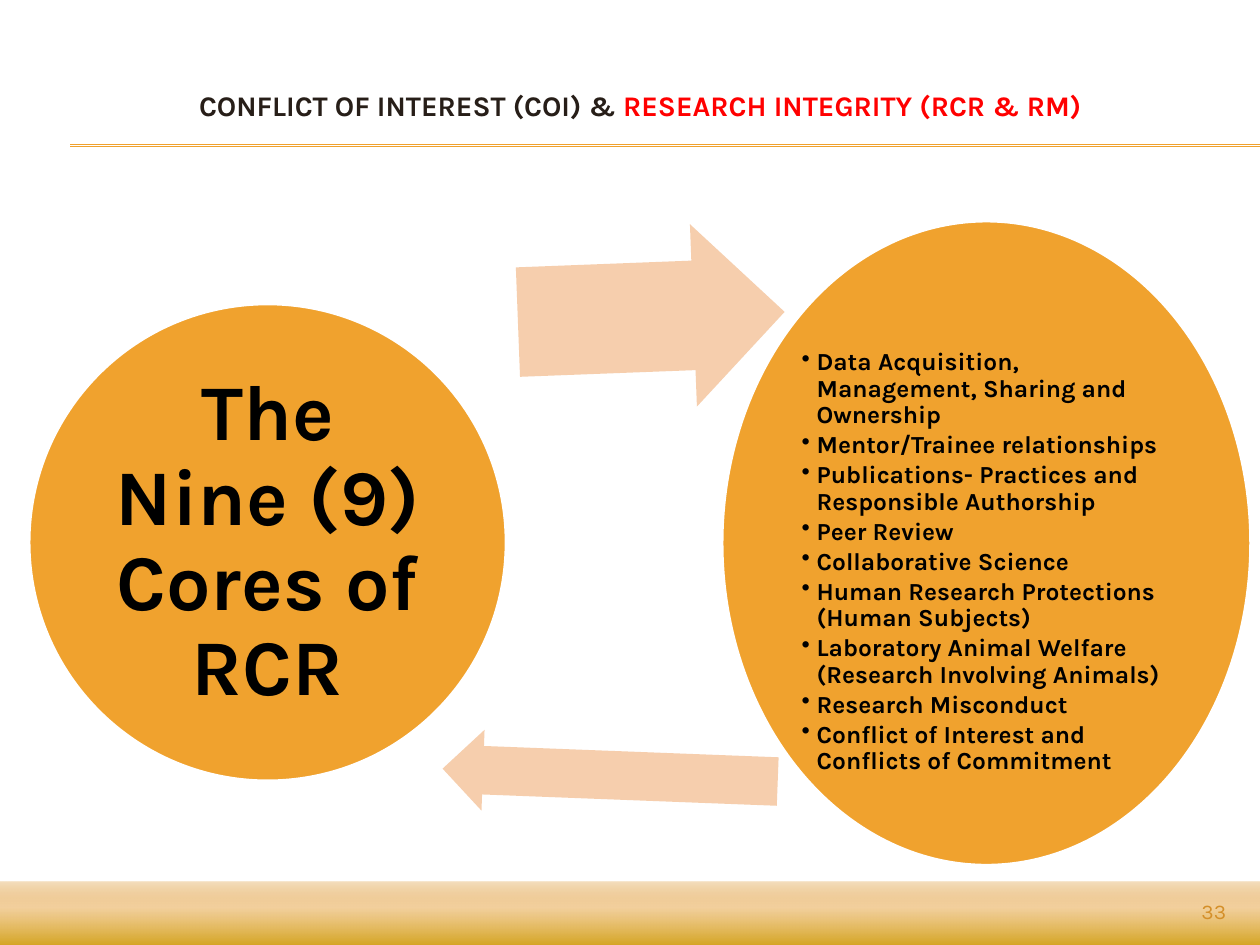
from copy import deepcopy
from dataclasses import dataclass

from lxml.etree import SubElement
from pptx import Presentation
from pptx.dml.color import RGBColor
from pptx.enum.shapes import MSO_CONNECTOR as Connector, MSO_SHAPE as Shape
from pptx.enum.text import MSO_ANCHOR as Anchor, PP_ALIGN as Align
from pptx.oxml.ns import qn
from pptx.util import Cm, Pt


@dataclass(frozen=True)
class Theme:
    font: str = "Karla"
    gold: str = "F0A22E"
    peach: str = "F6CEAD"
    white: str = "FFFFFF"
    black: str = "000000"
    heading: str = "271E18"
    accent: str = "FF0000"
    number: str = "D48F29"
    band: tuple = ((0, "CC9900", 100), (0.65, "EFC17E", 75), (1, "D68000", 25))
    heading_size: float = 16.2
    hub_size: float = 45
    list_size: float = 14
    number_size: float = 12


@dataclass(frozen=True)
class Box:
    left: float
    top: float
    width: float
    height: float

    def inner(self, left, top, width, height):
        return Box(self.left + left, self.top + top, width, height)

    def lengths(self):
        return [Cm(v) for v in (self.left, self.top, self.width, self.height)]


THEME = Theme()
CORES = [
    "Data Acquisition, Management, Sharing and Ownership",
    "Mentor/Trainee relationships",
    "Publications- Practices and Responsible Authorship",
    "Peer Review",
    "Collaborative Science",
    "Human Research Protections (Human Subjects)",
    "Laboratory Animal Welfare (Research Involving Animals)",
    "Research Misconduct",
    "Conflict of Interest and Conflicts of Commitment",
]


def set_format(target, values):
    for name, value in values.items():
        setattr(target, name, value)


def add_run(paragraph, text, size, color, bold=True):
    run = paragraph.add_run()
    run.text = text
    set_format(run.font, {"name": THEME.font, "size": Pt(size), "bold": bold})
    run.font.color.rgb = RGBColor.from_string(color)


def add_label(slide, box, anchor, align):
    frame = slide.shapes.add_textbox(*box.lengths()).text_frame
    set_format(frame, {"word_wrap": True, "vertical_anchor": anchor})
    frame.paragraphs[0].alignment = align
    return frame.paragraphs[0]


def add_figure(slide, kind, box, color, outline=None):
    figure = slide.shapes.add_shape(kind, *box.lengths())
    figure.shadow.inherit = False
    figure.fill.solid()
    figure.fill.fore_color.rgb = RGBColor.from_string(color)
    if outline:
        figure.line.color.rgb = RGBColor.from_string(outline)
        figure.line.width = Pt(2)
    else:
        figure.line.fill.background()
    return figure


def add_ellipse(slide, box, margin, extra_top=0):
    ellipse = add_figure(slide, Shape.OVAL, box, THEME.gold, THEME.white)
    frame = ellipse.text_frame
    set_format(frame, {
        "word_wrap": True, "vertical_anchor": Anchor.MIDDLE,
        "margin_left": Cm(margin), "margin_right": Cm(margin),
        "margin_top": Cm(margin + extra_top), "margin_bottom": Cm(margin),
    })
    return frame


def add_arrow(slide, box, rotation):
    arrow = add_figure(slide, Shape.RIGHT_ARROW, box, THEME.peach)
    arrow.rotation = rotation
    arrow.adjustments[0], arrow.adjustments[1] = 0.6, 0.5


def add_bullet(paragraph, indent):
    properties = paragraph._p.get_or_add_pPr()
    properties.set("marL", str(Cm(indent)))
    properties.set("indent", str(-Cm(indent)))
    SubElement(properties, qn("a:buChar")).set("char", "•")


def draw_header(slide, box):
    for y in (box.height - 0.03, box.height):
        rule = slide.shapes.add_connector(
            Connector.STRAIGHT, Cm(box.left + 0.58), Cm(box.top + y),
            Cm(box.left + box.width), Cm(box.top + y))
        rule.line.color.rgb = RGBColor.from_string(THEME.gold)
        rule.line.width = Pt(0.75)
        SubElement(rule._element.spPr, qn("a:effectLst"))
    heading = add_label(slide, box.inner(0, 0, 24.13, 0.84), Anchor.MIDDLE, Align.CENTER)
    add_run(heading, "CONFLICT OF INTEREST (COI) & ", THEME.heading_size, THEME.heading)
    add_run(heading, "RESEARCH INTEGRITY (RCR & RM)", THEME.heading_size, THEME.accent)


def draw_footer(slide, box):
    band = add_figure(slide, Shape.RECTANGLE, box, THEME.gold)
    band.fill.gradient()
    band.fill.gradient_angle = 90
    stops = band._element.spPr.find(".//" + qn("a:gsLst"))
    stops.append(deepcopy(stops[0]))
    for stop, element, (position, color, opacity) in zip(
            band.fill.gradient_stops, stops, THEME.band):
        stop.position = position
        stop.color.rgb = RGBColor.from_string(color)
        SubElement(element[0], qn("a:alpha")).set("val", str(opacity * 1000))
    number = add_label(slide, box.inner(22.89, 0.2, 2.11, 0.69), Anchor.TOP, Align.RIGHT)
    add_run(number, "33", THEME.number_size, THEME.number, bold=False)


def draw_cycle(slide, box):
    hub = add_ellipse(slide, box.inner(0, 1.67, 9.63, 9.63), 0.15).paragraphs[0]
    set_format(hub, {"alignment": Align.CENTER, "line_spacing": 0.9})
    add_run(hub, "The Nine (9) Cores of RCR", THEME.hub_size, THEME.black)

    add_arrow(slide, box.inner(9.86, 0.1, 5.38, 3.68), 357.8)

    cores = add_ellipse(slide, box.inner(13.97, 0, 10.67, box.height), 0.05, extra_top=0.78)
    for index, core in enumerate(CORES):
        item = cores.add_paragraph() if index else cores.paragraphs[0]
        add_bullet(item, 0.3)
        set_format(item, {"alignment": Align.LEFT, "level": 1,
                          "line_spacing": 0.9, "space_after": Pt(2)})
        add_run(item, core, THEME.list_size, THEME.black)

    add_arrow(slide, box.inner(8.34, 10.36, 6.76, 1.63), 182.2)


def main():
    deck = Presentation()
    deck.slide_width, deck.slide_height = Cm(25.4), Cm(19.05)
    slide = deck.slides.add_slide(deck.slide_layouts[6])
    draw_header(slide, Box(0.84, 1.7, 24.56, 1.25))
    draw_footer(slide, Box(-0.03, 17.78, 25.48, 1.47))
    draw_cycle(slide, Box(0.58, 4.45, 24.64, 13))
    deck.save("out.pptx")


if __name__ == "__main__":
    main()
